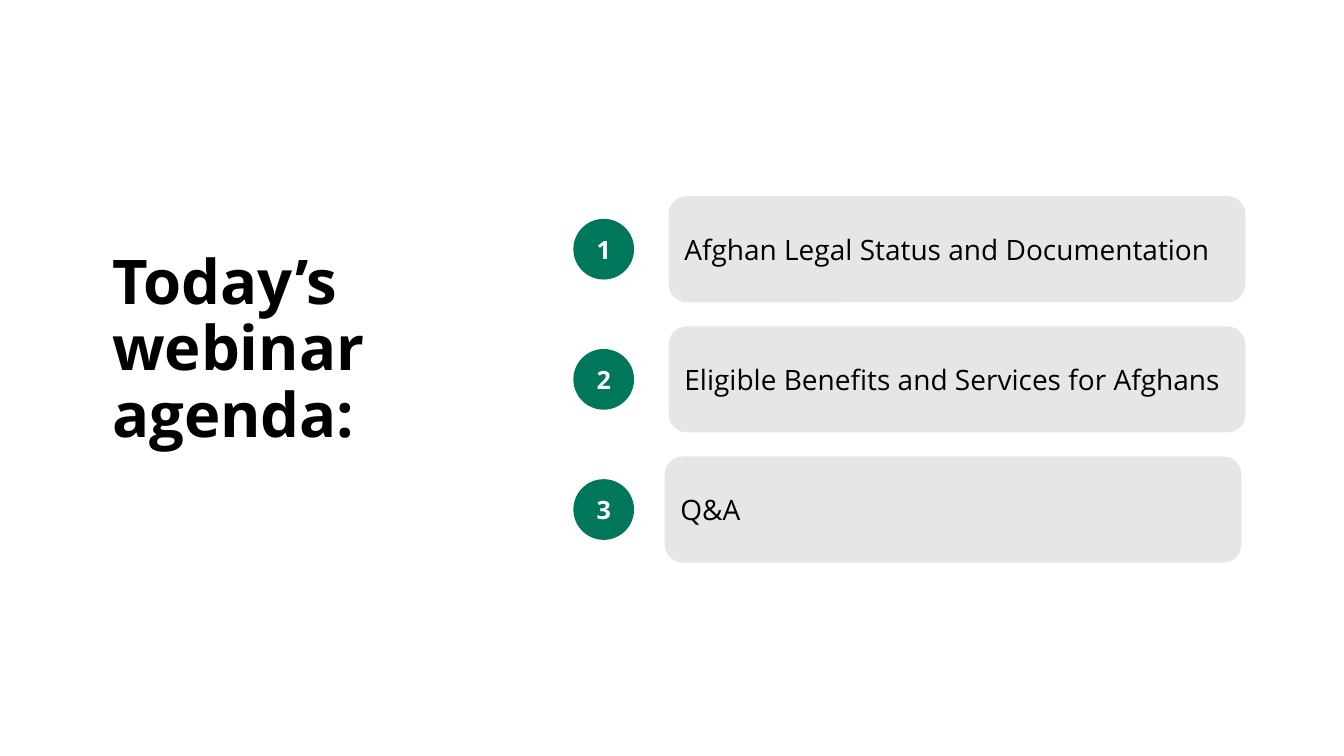
from pptx import Presentation
from pptx.dml.color import RGBColor
from pptx.enum.shapes import MSO_SHAPE
from pptx.enum.text import MSO_ANCHOR, PP_ALIGN
from pptx.util import Cm, Pt

BLACK = RGBColor(0x00, 0x00, 0x00)
WHITE = RGBColor(0xFF, 0xFF, 0xFF)
GREEN = RGBColor(0x00, 0x76, 0x5A)
GREY = RGBColor(0xE7, 0xE6, 0xE6)


def write(shape, text, size, color=BLACK, bold=False, align=PP_ALIGN.LEFT,
          anchor=MSO_ANCHOR.MIDDLE, line_spacing=None):
    frame = shape.text_frame
    frame.word_wrap = True
    frame.vertical_anchor = anchor
    paragraph = frame.paragraphs[0]
    paragraph.alignment = align
    paragraph.line_spacing = line_spacing
    run = paragraph.add_run()
    run.text = text
    run.font.name = "Open Sans"
    run.font.size = Pt(size)
    run.font.bold = bold
    run.font.color.rgb = color


def add_filled(kind, left, top, width, height, color):
    shape = slide.shapes.add_shape(kind, Cm(left), Cm(top), Cm(width), Cm(height))
    shape.shadow.inherit = False
    shape.fill.solid()
    shape.fill.fore_color.rgb = color
    return shape


deck = Presentation()
deck.slide_width = Cm(33.87)
deck.slide_height = Cm(19.05)
slide = deck.slides.add_slide(deck.slide_layouts[5])

heading = slide.shapes.title
heading.left, heading.top = Cm(2.57), Cm(6.2)
heading.width, heading.height = Cm(9.83), Cm(5.89)
write(heading, "Today’s webinar agenda:", 44, bold=True,
      anchor=MSO_ANCHOR.TOP, line_spacing=0.9)

FIRST_TOP, PITCH = 4.96, 3.28
TOPIC_WIDTH, TOPIC_HEIGHT = 14.5, 2.64
BADGE_SIZE = 1.53

agenda = [
    ("Afghan Legal Status and Documentation", 16.87),
    ("Eligible Benefits and Services for Afghans", 16.87),
    ("Q&A", 16.77),
]
for index, (topic, topic_left) in enumerate(agenda):
    top = FIRST_TOP + index * PITCH

    badge_top = top + (TOPIC_HEIGHT - BADGE_SIZE) / 2
    badge = add_filled(MSO_SHAPE.OVAL, 14.45, badge_top, BADGE_SIZE, BADGE_SIZE, GREEN)
    badge.line.fill.background()
    write(badge, str(index + 1), 18, color=WHITE, bold=True, align=PP_ALIGN.CENTER)

    bar = add_filled(MSO_SHAPE.ROUNDED_RECTANGLE, topic_left, top,
                     TOPIC_WIDTH, TOPIC_HEIGHT, GREY)
    bar.line.color.rgb = GREY
    bar.line.width = Pt(1)
    write(bar, topic, 20)

deck.save("out.pptx")
